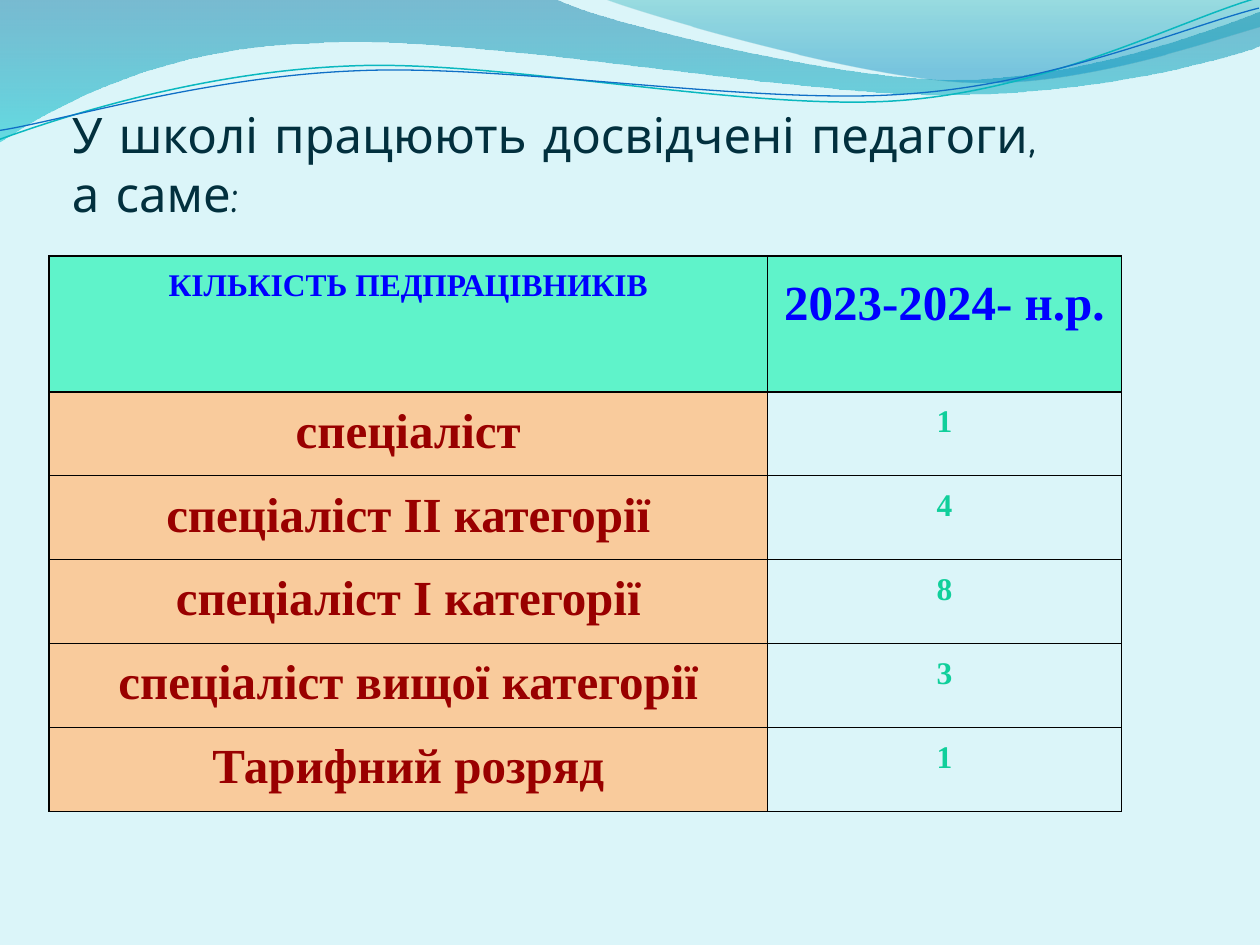
from lxml import etree
from pptx import Presentation
from pptx.dml.color import RGBColor
from pptx.enum.text import MSO_ANCHOR, PP_ALIGN
from pptx.oxml import parse_xml
from pptx.oxml.ns import nsdecls, qn
from pptx.util import Inches, Pt

LEFT, CENTER = PP_ALIGN.LEFT, PP_ALIGN.CENTER
MIDDLE, TOP = MSO_ANCHOR.MIDDLE, MSO_ANCHOR.TOP
SERIF = "Times New Roman"
HEAD_FILL, LABEL_FILL = "5FF3CA", "F9CB9C"
BLUE, RED, GREEN = "0000FF", "990000", "10CF9B"


def rgb(value):
    return RGBColor.from_string(value)


class Deck:
    def __init__(self, prs, background):
        self.s = prs.slides.add_slide(prs.slide_layouts[5])
        fill = self.s.background.fill
        fill.solid()
        fill.fore_color.rgb = rgb(background)

    def format_text(self, p, text, color, align=CENTER, spacing=None, **font):
        p.alignment = align
        p.line_spacing = spacing
        r = p.add_run()
        r.text = text
        for name, value in font.items():
            setattr(r.font, name, value)
        r.font.color.rgb = rgb(color)

    def freeform(self, segments, closed):
        """Draw a start point, then lines (2 numbers) and Bezier curves (6 numbers)."""
        points = [(Inches(seg[i]), Inches(seg[i + 1]))
                  for seg in segments for i in range(0, len(seg), 2)]
        builder = self.s.shapes.build_freeform(*points[0])
        builder.add_line_segments(points[1:], close=closed)
        sp = builder.convert_to_shape()
        sp.shadow.inherit = False
        # Merge the three lines of each curve into one cubic Bezier
        lines = iter(list(sp._element.iter(qn("a:lnTo"))))
        for seg in segments[1:]:
            first = next(lines)
            if len(seg) == 6:
                first.tag = qn("a:cubicBezTo")
                for _ in range(2):
                    line = next(lines)
                    first.append(line[0])
                    line.getparent().remove(line)
        return sp

    def wave(self, segments, stops):
        sp = self.freeform(segments, True)
        sp.line.fill.background()
        sp.fill.gradient()
        sp.fill.gradient_angle = 270
        for stop, (position, color, _) in zip(sp.fill.gradient_stops, stops):
            stop.position = position
            stop.color.rgb = rgb(color)
        colors = sp._element.spPr.iter(qn("a:srgbClr"))
        for clr, (_, _, opacity) in zip(colors, stops):
            etree.SubElement(clr, qn("a:alpha")).set("val", str(opacity * 1000))

    def curve(self, segments, color, width):
        sp = self.freeform(segments, False)
        sp.rotation = 357.3
        sp.fill.background()
        sp.line.color.rgb = rgb(color)
        sp.line.width = Pt(width)

    def title(self, text, x, y, w, h):
        sp = self.s.shapes.title
        sp.left, sp.top, sp.width, sp.height = map(Inches, (x, y, w, h))
        tf = sp.text_frame
        tf.word_wrap = True
        tf.vertical_anchor = MIDDLE
        self.format_text(tf.paragraphs[0], text, "02303E", LEFT,
                         size=Pt(28), name="Comic Neue")
        self.s.shapes._spTree.append(sp._element)  # in front of the waves

    def cell(self, cell, text, fill, color, size, spacing=None):
        cell.margin_left = cell.margin_right = Inches(0.07)
        cell.margin_top = cell.margin_bottom = Inches(0.1)
        cell.vertical_anchor = TOP
        if fill:
            cell.fill.solid()
            cell.fill.fore_color.rgb = rgb(fill)
        else:
            cell.fill.background()
        self.format_text(cell.text_frame.paragraphs[0], text, color, spacing=spacing,
                         size=Pt(size), name=SERIF, bold=True)
        for i, side in enumerate(("lnL", "lnR", "lnT", "lnB")):
            cell._tc.get_or_add_tcPr().insert(i, parse_xml(
                f'<a:{side} {nsdecls("a")} w="12700"><a:solidFill>'
                f'<a:srgbClr val="000000"/></a:solidFill></a:{side}>'))

    def table(self, header, rows, x, y, widths, height, head_h):
        heights = [head_h] + [(height - head_h) / len(rows)] * len(rows)
        table = self.s.shapes.add_table(
            len(heights), len(widths), Inches(x), Inches(y),
            Inches(sum(widths)), Inches(height)).table
        table.first_row = table.horz_banding = False
        for column, width in zip(table.columns, widths):
            column.width = Inches(width)
        for row, row_h in zip(table.rows, heights):
            row.height = Inches(row_h)
        self.cell(table.cell(0, 0), header[0], HEAD_FILL, BLUE, 18)
        self.cell(table.cell(0, 1), header[1], HEAD_FILL, BLUE, 28, 1.15)
        for i, (label, count) in enumerate(rows, 1):
            self.cell(table.cell(i, 0), label, LABEL_FILL, RED, 28)
            self.cell(table.cell(i, 1), count, None, GREEN, 18)


def main():
    prs = Presentation()
    prs.slide_width, prs.slide_height = Inches(10), Inches(7.5)
    deck = Deck(prs, "DBF5F9")

    # Waves along the top
    deck.wave([(0, 0), (4.4, -0.01), (4.76, 0.17, 6.64, 0.63, 7.58, 0.63),
               (8.53, 0.63, 9.58, 0.26, 10, 0.09), (10.01, 0.36),
               (9.83, 0.44, 8.7, 0.76, 7.46, 0.75),
               (6.22, 0.75, 3.82, 0.28, 2.57, 0.34),
               (1.29, 0.36, 0.46, 0.83, -0.01, 1.13), (0, 0)],
              [(0, "0074A1", 45), (1, "00C6CF", 55)])
    deck.wave([(4.79, -0.01), (5.09, 0.11, 6.82, 0.62, 7.69, 0.65),
               (8.56, 0.69, 9.61, 0.32, 10, 0.21), (10, 0), (4.79, -0.01)],
              [(0, "00A1A9", 30), (0.8, "008BBF", 45)])

    # Thin curves over the waves, given before their slight turn
    deck.curve([(-0.02, 0.87), (0.47, 0.72, 1.58, 0.41, 2.78, 0.42),
                (3.96, 0.42, 5.91, 0.93, 7.12, 0.9),
                (8.32, 0.87, 9.4, 0.36, 10, 0.22)], "0AB8BF", 0.85)
    deck.curve([(-0.02, 0.8), (0.46, 0.75, 1.64, 0.45, 2.83, 0.46),
                (4.03, 0.46, 5.96, 0.88, 7.16, 0.85),
                (8.35, 0.83, 9.42, 0.42, 10.01, 0.3)], "0F6FC6", 0.75)

    # Title and staff table
    deck.title("У школі працюють досвідчені педагоги, а саме:", 0.47, 0.78, 8.13, 1.04)
    deck.table(("КІЛЬКІСТЬ ПЕДПРАЦІВНИКІВ", "2023-2024- н.р."),
               [("спеціаліст", "1"),
                ("спеціаліст ІІ категорії", "4"),
                ("спеціаліст І категорії", "8"),
                ("спеціаліст вищої категорії", "3"),
                ("Тарифний розряд", "1")],
               0.39, 2.03, (5.7, 2.81), 4.41, 1.08)
    prs.save("out.pptx")


if __name__ == "__main__":
    main()
